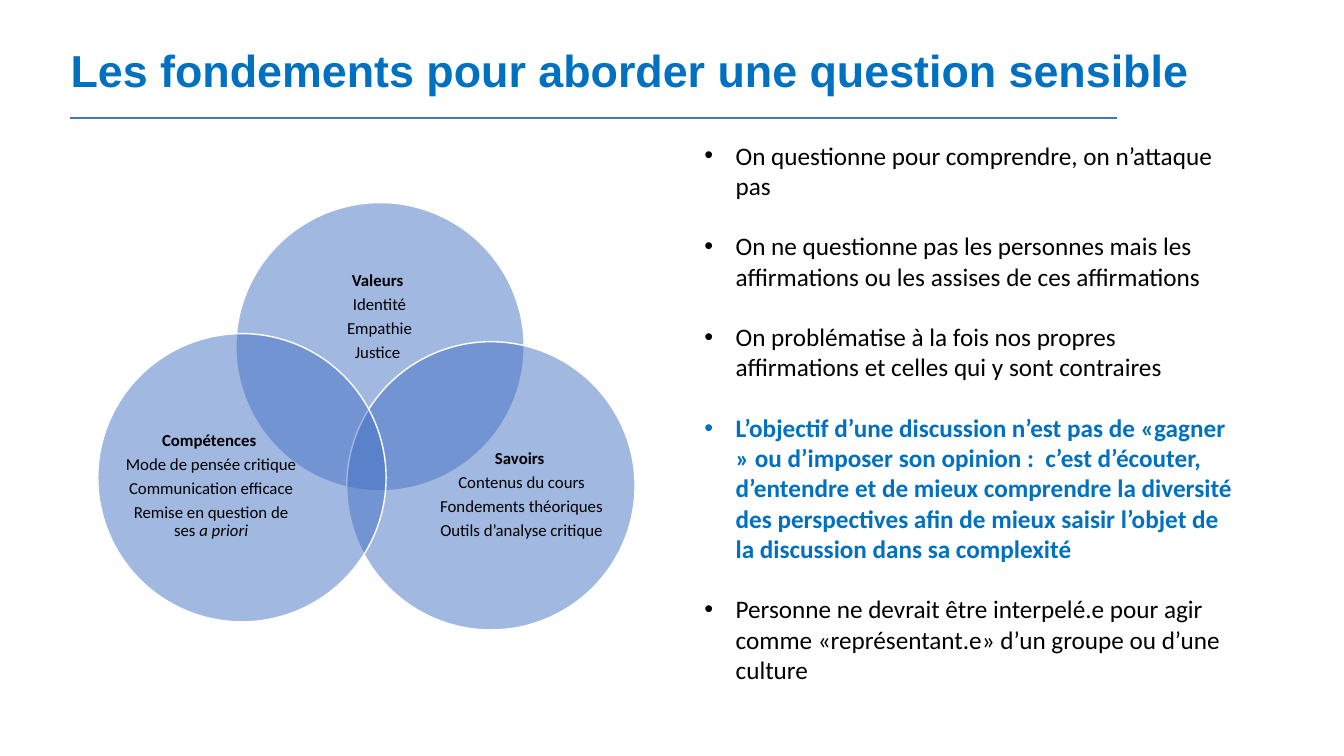
from dataclasses import dataclass

import lxml.etree
import pptx
import pptx.dml.color
import pptx.enum.shapes
import pptx.enum.text
import pptx.oxml.ns
import pptx.slide
import pptx.text.text
import pptx.util

RGBColor = pptx.dml.color.RGBColor
BLACK = RGBColor(0x00, 0x00, 0x00)
WHITE = RGBColor(0xFF, 0xFF, 0xFF)
BLUE = RGBColor(0x00, 0x70, 0xC0)
CIRCLE_BLUE = RGBColor(0x44, 0x72, 0xC4)

COLUMNS, ROWS = 160, 90
SLIDE_W, SLIDE_H = pptx.util.Inches(13.33), pptx.util.Inches(7.5)
DIAMETER = 34.32
BODY_FONT = "Calibri"


@dataclass(frozen=True)
class Box:
    """A rectangle in grid columns and rows."""
    left: float
    top: float
    width: float
    height: float


@dataclass(frozen=True)
class Circle:
    left: float
    top: float
    label: Box
    heading: str
    lines: tuple[str, ...]
    italic_end: str = ""


@dataclass(frozen=True)
class Principle:
    text: str
    key: bool = False


TITLE = "Les fondements pour aborder une question sensible"
TITLE_BOX = Box(7.2, 0, 138, 17.4)
PRINCIPLES_BOX = Box(82.68, 16.08, 66.36, 70.32)
RULE = Box(8.28, 14.04, 124.68, 0)

CIRCLES = (
    Circle(28.08, 24.12, Box(32.64, 30.12, 25.08, 15.36), "Valeurs ",
           ("Identité", "Empathie", "Justice ")),
    Circle(41.28, 40.68, Box(51.84, 49.56, 20.52, 18.84), "Savoirs ",
           ("Contenus du cours", "Fondements théoriques", "Outils d’analyse critique")),
    Circle(11.64, 39.72, Box(14.88, 48.48, 20.52, 18.84), "Compétences ",
           ("Mode de pensée critique", "Communication efficace", "Remise en question de ses "),
           italic_end="a priori"),
)

PRINCIPLES = (
    Principle("On questionne pour comprendre, on n’attaque pas"),
    Principle("On ne questionne pas les personnes mais les affirmations ou les assises "
              "de ces affirmations"),
    Principle("On problématise à la fois nos propres affirmations et celles qui y sont "
              "contraires"),
    Principle("L’objectif d’une discussion n’est pas de «gagner » ou d’imposer son opinion :  "
              "c’est d’écouter, d’entendre et de mieux comprendre la diversité des perspectives "
              "afin de mieux saisir l’objet de la discussion dans sa complexité", key=True),
    Principle("Personne ne devrait être interpelé.e pour agir comme «représentant.e» d’un "
              "groupe ou d’une culture"),
)


def x(columns: float) -> int:
    return round(SLIDE_W * columns / COLUMNS)


def y(rows: float) -> int:
    return round(SLIDE_H * rows / ROWS)


def place(box: Box) -> tuple[int, int, int, int]:
    return x(box.left), y(box.top), x(box.width), y(box.height)


def format_runs(p: pptx.text.text._Paragraph, font: str, size: float,
                color: RGBColor, bold: bool = False) -> None:
    for r in p.runs:
        r.font.name = font
        r.font.size = pptx.util.Pt(size)
        r.font.color.rgb = color
        r.font.bold = bold


def add_child(parent: lxml.etree.ElementBase, tag: str, **attributes: str) -> None:
    lxml.etree.SubElement(parent, pptx.oxml.ns.qn(tag), attributes)


def add_title(s: pptx.slide.Slide) -> None:
    sp = s.shapes.title
    sp.left, sp.top, sp.width, sp.height = place(TITLE_BOX)
    tf = sp.text_frame
    tf.text = TITLE
    tf.vertical_anchor = pptx.enum.text.MSO_ANCHOR.MIDDLE
    p = tf.paragraphs[0]
    p.alignment = pptx.enum.text.PP_ALIGN.LEFT
    p.line_spacing = 0.9
    format_runs(p, "Arial", 32, BLUE, bold=True)


def add_circle(s: pptx.slide.Slide, circle: Circle) -> None:
    """Draw a half-transparent circle with its label on top."""
    sp = s.shapes.add_shape(pptx.enum.shapes.MSO_SHAPE.OVAL, x(circle.left), y(circle.top),
                            x(DIAMETER), y(DIAMETER))
    sp.shadow.inherit = False
    sp.fill.solid()
    sp.fill.fore_color.rgb = CIRCLE_BLUE
    fill_color = sp._element.spPr.find(".//" + pptx.oxml.ns.qn("a:srgbClr"))
    add_child(fill_color, "a:alpha", val="50000")
    sp.line.color.rgb = WHITE
    sp.line.width = pptx.util.Pt(1)

    tf = s.shapes.add_textbox(*place(circle.label)).text_frame
    tf.word_wrap = True
    tf.vertical_anchor = pptx.enum.text.MSO_ANCHOR.MIDDLE
    tf.margin_left = tf.margin_top = tf.margin_right = tf.margin_bottom = 0
    tf.text = "\n".join((circle.heading, *circle.lines))
    if circle.italic_end:
        r = tf.paragraphs[-1].add_run()
        r.text = circle.italic_end
        r.font.italic = True
    for i, p in enumerate(tf.paragraphs):
        p.alignment = pptx.enum.text.PP_ALIGN.CENTER
        p.line_spacing = 0.9
        p.space_after = pptx.util.Pt(4.2)
        format_runs(p, BODY_FONT, 12, BLACK, bold=i == 0)


def add_principles(s: pptx.slide.Slide) -> None:
    tf = s.shapes.add_textbox(*place(PRINCIPLES_BOX)).text_frame
    tf.word_wrap = True
    tf.text = "\n".join(principle.text for principle in PRINCIPLES)
    indent = pptx.util.Inches(0.31)
    for p, principle in zip(tf.paragraphs, PRINCIPLES):
        p.space_after = pptx.util.Pt(21.6)
        format_runs(p, BODY_FONT, 18, BLUE if principle.key else BLACK, principle.key)
        pPr = p._p.get_or_add_pPr()
        pPr.set("marL", str(indent))
        pPr.set("indent", str(-indent))
        add_child(pPr, "a:buFont", typeface="Arial")
        add_child(pPr, "a:buChar", char="•")


def add_rule(s: pptx.slide.Slide) -> None:
    line = s.shapes.add_connector(pptx.enum.shapes.MSO_CONNECTOR.STRAIGHT, x(RULE.left),
                                  y(RULE.top), x(RULE.left + RULE.width), y(RULE.top))
    line.line.color.rgb = CIRCLE_BLUE
    line.line.width = pptx.util.Pt(1.25)
    add_child(line._element.spPr, "a:effectLst")


def main() -> None:
    prs = pptx.Presentation()
    prs.slide_width, prs.slide_height = SLIDE_W, SLIDE_H
    s = prs.slides.add_slide(prs.slide_layouts.get_by_name("Title Only"))
    add_title(s)
    for circle in CIRCLES:
        add_circle(s, circle)
    add_principles(s)
    add_rule(s)
    prs.save("out.pptx")


if __name__ == "__main__":
    main()
